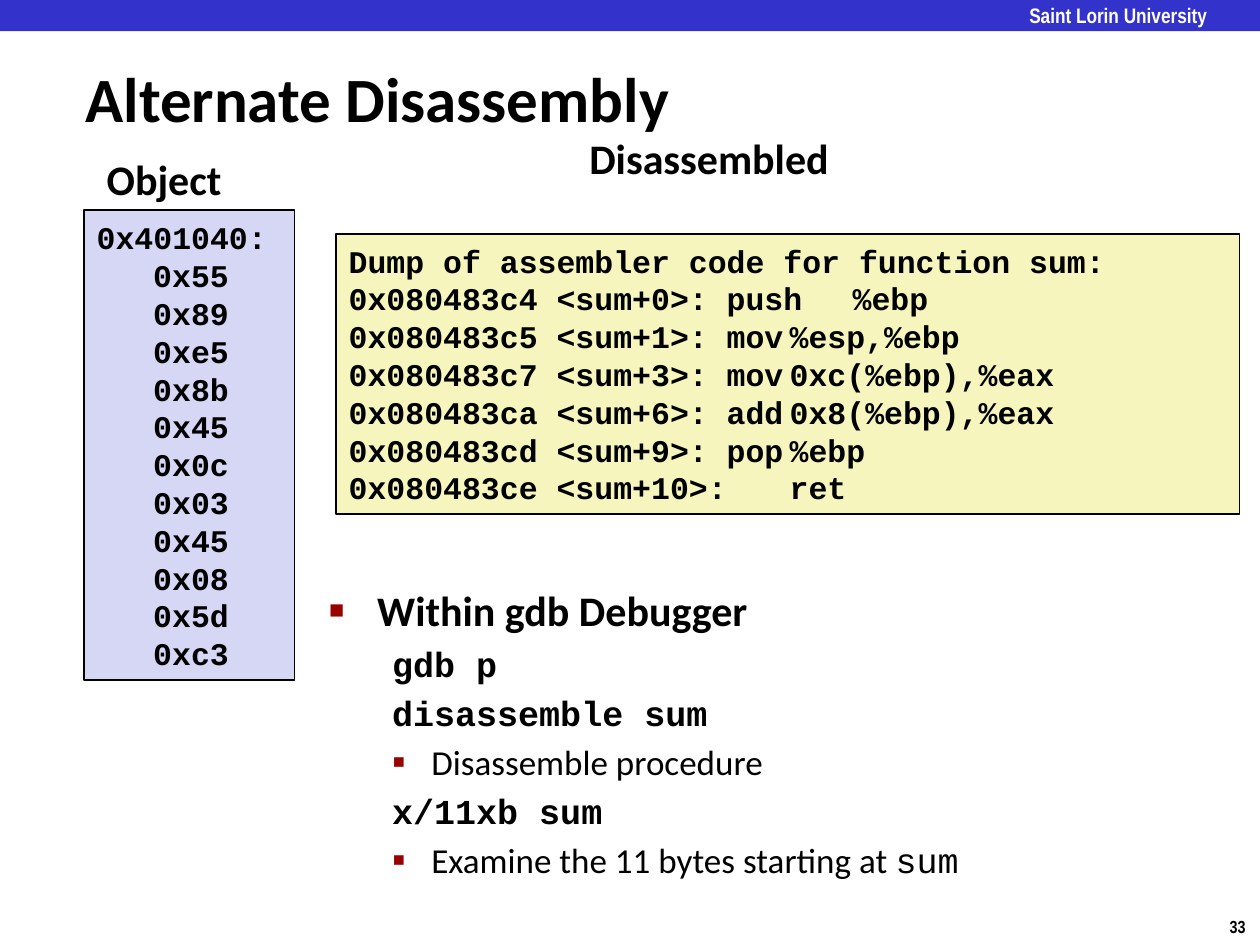
import pptx
import pptx.util
import pptx.dml.color
import pptx.enum.shapes
import pptx.enum.text
import pptx.oxml.ns
import lxml.etree

Cm, Pt = pptx.util.Cm, pptx.util.Pt
ANCHOR = pptx.enum.text.MSO_ANCHOR
COLORS = {
    "text": "000000",
    "banner": "3333CC",
    "banner_text": "FFFFFF",
    "bytes": "D6D6F5",
    "assembly": "F6F5BD",
    "bullet": "990000",
}
SANS, MONO, NARROW = "Calibri", "Courier New", "Arial Narrow"
CODE_COLUMNS = (9.14, 11.81)

OBJECT_BYTES = "0x55 0x89 0xe5 0x8b 0x45 0x0c 0x03 0x45 0x08 0x5d 0xc3".split()
INSTRUCTIONS = [
    ("0x080483c4 <sum+0>:", "push", "%ebp"),
    ("0x080483c5 <sum+1>:", "mov", "%esp,%ebp"),
    ("0x080483c7 <sum+3>:", "mov", "0xc(%ebp),%eax"),
    ("0x080483ca <sum+6>:", "add", "0x8(%ebp),%eax"),
    ("0x080483cd <sum+9>:", "pop", "%ebp"),
    ("0x080483ce <sum+10>:", "ret"),
]


def rgb(name):
    return pptx.dml.color.RGBColor.from_string(COLORS[name])


def add_run(paragraph, text, size, font=SANS, bold=True, color="text"):
    run = paragraph.add_run()
    run.text = text
    run.font.size = Pt(size)
    run.font.name = font
    run.font.bold = bold
    run.font.color.rgb = rgb(color)


def add_child(parent, tag, **attributes):
    child = lxml.etree.SubElement(parent, pptx.oxml.ns.qn(tag))
    for key, value in attributes.items():
        child.set(key, str(value))
    return child


def set_indent(paragraph, left, first=0):
    properties = paragraph._p.get_or_add_pPr()
    properties.set("marL", str(Cm(left)))
    properties.set("indent", str(Cm(first)))
    return properties


def set_bullet(properties, char=None, percent=100):
    if char is None:
        add_child(properties, "a:buNone")
        return
    color = add_child(properties, "a:buClr")
    add_child(color, "a:srgbClr", val=COLORS["bullet"])
    add_child(properties, "a:buSzPct", val=percent * 1000)
    add_child(properties, "a:buChar", char=char)


def set_tabs(paragraph, positions):
    tabs = add_child(paragraph._p.get_or_add_pPr(), "a:tabLst")
    for position in positions:
        add_child(tabs, "a:tab", pos=Cm(position), algn="l")


def next_paragraph(frame, index):
    return frame.add_paragraph() if index else frame.paragraphs[0]


def place(shape, left, top, width, height):
    shape.left, shape.top = Cm(left), Cm(top)
    shape.width, shape.height = Cm(width), Cm(height)


def add_label(slide, box, text, size, font=SANS, color="text", wrap=True, inset=True):
    label = slide.shapes.add_textbox(*map(Cm, box))
    frame = label.text_frame
    frame.word_wrap = wrap
    if not inset:
        frame.margin_left = frame.margin_right = 0
        frame.margin_top = frame.margin_bottom = 0
    add_run(frame.paragraphs[0], text, size, font, color=color)


def add_panel(slide, box, fill, outlined=True):
    panel = slide.shapes.add_shape(
        pptx.enum.shapes.MSO_SHAPE.RECTANGLE, *map(Cm, box))
    panel.shadow.inherit = False
    panel.fill.solid()
    panel.fill.fore_color.rgb = rgb(fill)
    if outlined:
        panel.line.color.rgb = rgb("text")
        panel.line.width = Pt(1)
    else:
        panel.line.fill.background()
    return panel


def add_code(slide, box, fill, heading, lines, indent=0, tabs=()):
    frame = add_panel(slide, box, fill).text_frame
    frame.word_wrap = True
    frame.vertical_anchor = ANCHOR.MIDDLE
    for index, line in enumerate([heading] + lines):
        paragraph = next_paragraph(frame, index)
        paragraph.alignment = pptx.enum.text.PP_ALIGN.LEFT
        paragraph.line_spacing = Pt(21.6)
        set_indent(paragraph, indent if index else 0)
        if index and tabs:
            set_tabs(paragraph, tabs)
        add_run(paragraph, line, 18, MONO)


def fill_title(title):
    place(title, 1.47, 1.17, 17.35, 1.6)
    frame = title.text_frame
    frame.auto_size = pptx.enum.text.MSO_AUTO_SIZE.NONE
    frame.vertical_anchor = ANCHOR.MIDDLE
    frame.paragraphs[0].alignment = pptx.enum.text.PP_ALIGN.LEFT
    add_run(frame.paragraphs[0], "Alternate Disassembly", 36)


def fill_debugger_steps(body):
    place(body, 6.38, 11.66, 17.5, 6.25)
    frame = body.text_frame
    frame.auto_size = pptx.enum.text.MSO_AUTO_SIZE.NONE
    heading = frame.paragraphs[0]
    set_bullet(set_indent(heading, 0.97, -0.97), "■", 60)
    add_run(heading, "Within gdb Debugger", 24)
    steps = [
        ("gdb p", None),
        ("disassemble sum", None),
        ("Disassemble procedure", ""),
        ("x/11xb sum", None),
        ("Examine the 11 bytes starting at ", "sum"),
    ]
    for text, symbol in steps:
        is_command = symbol is None
        paragraph = frame.add_paragraph()
        paragraph.level = 1
        paragraph.line_spacing = Pt(24)
        properties = set_indent(paragraph, 2.06, -0.79)
        set_bullet(properties, None if is_command else "▪", 110)
        add_run(paragraph, text, 20, MONO if is_command else SANS, is_command)
        if symbol:
            add_run(paragraph, symbol, 20, MONO, False)


def main():
    deck = pptx.Presentation()
    deck.slide_width, deck.slide_height = Cm(25.4), Cm(19.05)
    slide = deck.slides.add_slide(deck.slide_layouts[1])
    add_panel(slide, (0, 0, 25.4, 0.63), "banner", outlined=False)
    add_label(slide, (20.75, 0.05, 4.24, 0.48), "Saint Lorin University", 12,
              NARROW, "banner_text", inset=False)
    add_label(slide, (24.54, 18.34, 0.86, 0.69), "33", 10, NARROW, wrap=False)
    fill_title(slide.shapes.title)
    add_label(slide, (11.63, 2.54, 7.24, 1.14), "Disassembled", 24)
    add_code(slide, (6.78, 4.72, 18.21, 5.64), "assembly",
             "Dump of assembler code for function sum:",
             ["\t".join(parts) for parts in INSTRUCTIONS], tabs=CODE_COLUMNS)
    fill_debugger_steps(slide.placeholders[1])
    add_label(slide, (1.9, 2.97, 3.63, 1.14), "Object", 24)
    add_code(slide, (1.7, 4.24, 4.24, 9.47), "bytes", "0x401040:",
             OBJECT_BYTES, indent=1.14)
    deck.save("out.pptx")


if __name__ == "__main__":
    main()
